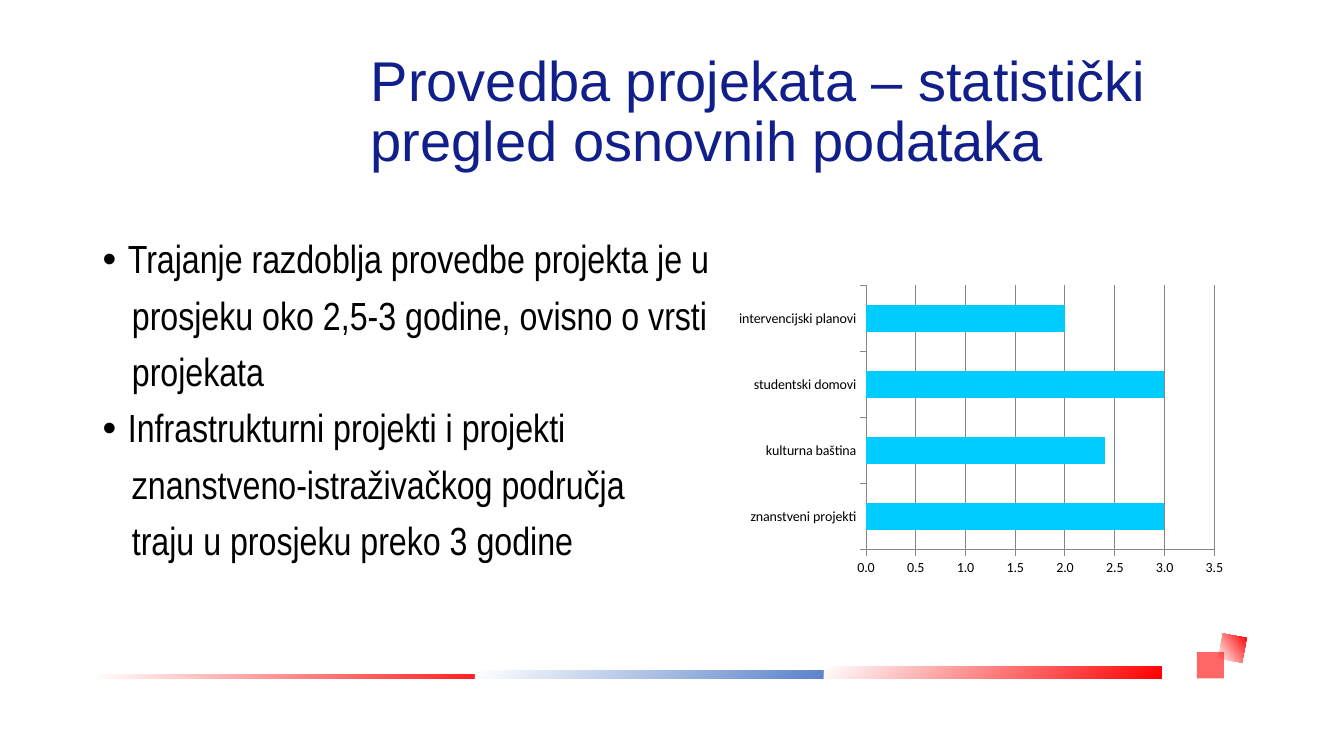
import pptx
import pptx.chart.data
import pptx.dml.color
import pptx.enum.chart
import pptx.enum.shapes
import pptx.enum.text
import pptx.oxml
import pptx.oxml.ns
import pptx.util

Inches = pptx.util.Inches
Pt = pptx.util.Pt

COLORS = {
    "white": "FFFFFF",
    "red": "FF0000",
    "blue": "4472C4",
    "title": "111F8A",
    "text": "000000",
    "bar": "00CCFF",
    "grid": "868686",
}

BODY = [
    (True, "Trajanje razdoblja provedbe projekta je u"),
    (False, "prosjeku oko 2,5-3 godine, ovisno o vrsti"),
    (False, "projekata"),
    (True, "Infrastrukturni projekti i projekti"),
    (False, "znanstveno-istraživačkog područja"),
    (False, "traju u prosjeku preko 3 godine"),
]

DURATIONS = {
    "znanstveni projekti": 3.0,
    "kulturna baština": 2.4,
    "studentski domovi": 3.0,
    "intervencijski planovi": 2.0,
}


def rgb(name):
    return pptx.dml.color.RGBColor.from_string(COLORS[name])


def add_block(s, left, top, width, height, color, gradient=True):
    sp = s.shapes.add_shape(pptx.enum.shapes.MSO_SHAPE.RECTANGLE,
                            Inches(left), Inches(top), Inches(width), Inches(height))
    sp.shadow.inherit = False
    sp.line.fill.background()
    if gradient:
        sp.fill.gradient()
        sp.fill.gradient_angle = 315
        for stop, name, position in zip(sp.fill.gradient_stops, ("white", color), (0, 1)):
            stop.color.rgb = rgb(name)
            stop.position = position
    else:
        sp.fill.solid()
        sp.fill.fore_color.rgb = rgb(color)
    return sp


def add_footer(s, left, top, width, height):
    bottom = top + height
    tilted = add_block(s, left + width - 0.25, top, 0.25, 0.24, "red")
    tilted.rotation = 280.6
    for x, w, h, color in ((0, 4.33, 0.04, "red"), (3.78, 3.94, 0.08, "blue"),
                           (7.24, 3.35, 0.12, "red")):
        add_block(s, left + x, bottom - h, w, h, color)
    square = add_block(s, left + width - 0.48, bottom - 0.26, 0.27, 0.26, "red", False)
    color = square.fill._xPr.find(".//" + pptx.oxml.ns.qn("a:srgbClr"))
    color.append(pptx.oxml.parse_xml(
        '<a:alpha %s val="60000"/>' % pptx.oxml.ns.nsdecls("a")))


def add_text_frame(s, left, top, width, height):
    tf = s.shapes.add_textbox(Inches(left), Inches(top), Inches(width), Inches(height)).text_frame
    tf.word_wrap = True
    return tf


def add_run(p, text, size, font, color):
    p.line_spacing = 0.9
    r = p.add_run()
    r.text = text
    r.font.size = Pt(size)
    r.font.name = font
    r.font.color.rgb = rgb(color)


def add_title(s, left, top, width, height):
    tf = add_text_frame(s, left, top, width, height)
    tf.vertical_anchor = pptx.enum.text.MSO_ANCHOR.MIDDLE
    add_run(tf.paragraphs[0], "Provedba projekata – statistički pregled osnovnih podataka",
            40, "Arial", "title")


def add_body(s, left, top, width, height):
    tf = add_text_frame(s, left, top, width, height)
    for i, (bulleted, text) in enumerate(BODY):
        p = tf.add_paragraph() if i else tf.paragraphs[0]
        pPr = p._p.get_or_add_pPr()
        margin, indent = (0.25, -0.25) if bulleted else (0, 0.29)
        pPr.set("marL", str(Inches(margin)))
        pPr.set("indent", str(Inches(indent)))
        if bulleted:
            for tag in ('buFont %s typeface="Arial"', 'buChar %s char="•"'):
                pPr.append(pptx.oxml.parse_xml(
                    "<a:" + tag % pptx.oxml.ns.nsdecls("a") + "/>"))
        if i:
            p.space_before = Pt(10)
        add_run(p, text, 28, "Arial Narrow", "text")


def add_duration_chart(s, left, top, width, height):
    data = pptx.chart.data.CategoryChartData(number_format="0.0")
    data.categories = list(DURATIONS)
    data.add_series("Series 1", list(DURATIONS.values()))
    chart = s.shapes.add_chart(pptx.enum.chart.XL_CHART_TYPE.BAR_CLUSTERED, Inches(left),
                               Inches(top), Inches(width), Inches(height), data).chart
    chart.has_legend = False
    chart.has_title = False
    chart.font.size = Pt(10)
    chart.font.name = "Calibri"
    chart.font.color.rgb = rgb("text")

    plot = chart.plots[0]
    plot.gap_width = 150
    plot.vary_by_categories = False
    fill = plot.series[0].format.fill
    fill.solid()
    fill.fore_color.rgb = rgb("bar")

    values = chart.value_axis
    values.minimum_scale = 0
    values.maximum_scale = 3.5
    values.major_unit = 0.5
    values.has_major_gridlines = True
    values.tick_labels.number_format = "0.0"
    values.tick_labels.number_format_is_linked = False
    for axis in (values, chart.category_axis):
        axis.major_tick_mark = pptx.enum.chart.XL_TICK_MARK.OUTSIDE
    for part in (values, values.major_gridlines, chart.category_axis):
        part.format.line.color.rgb = rgb("grid")
        part.format.line.width = Pt(0.75)


def main():
    prs = pptx.Presentation()
    prs.slide_width = Inches(13.33)
    prs.slide_height = Inches(7.5)
    s = prs.slides.add_slide(prs.slide_layouts[6])
    s.background.fill.solid()
    s.background.fill.fore_color.rgb = rgb("white")
    add_footer(s, 0.93, 6.31, 11.42, 0.42)
    add_title(s, 3.58, 0.4, 8.83, 1.45)
    add_body(s, 0.92, 2.33, 11.5, 3.88)
    add_duration_chart(s, 7.23, 2.77, 5, 3)
    prs.save("out.pptx")


if __name__ == "__main__":
    main()
